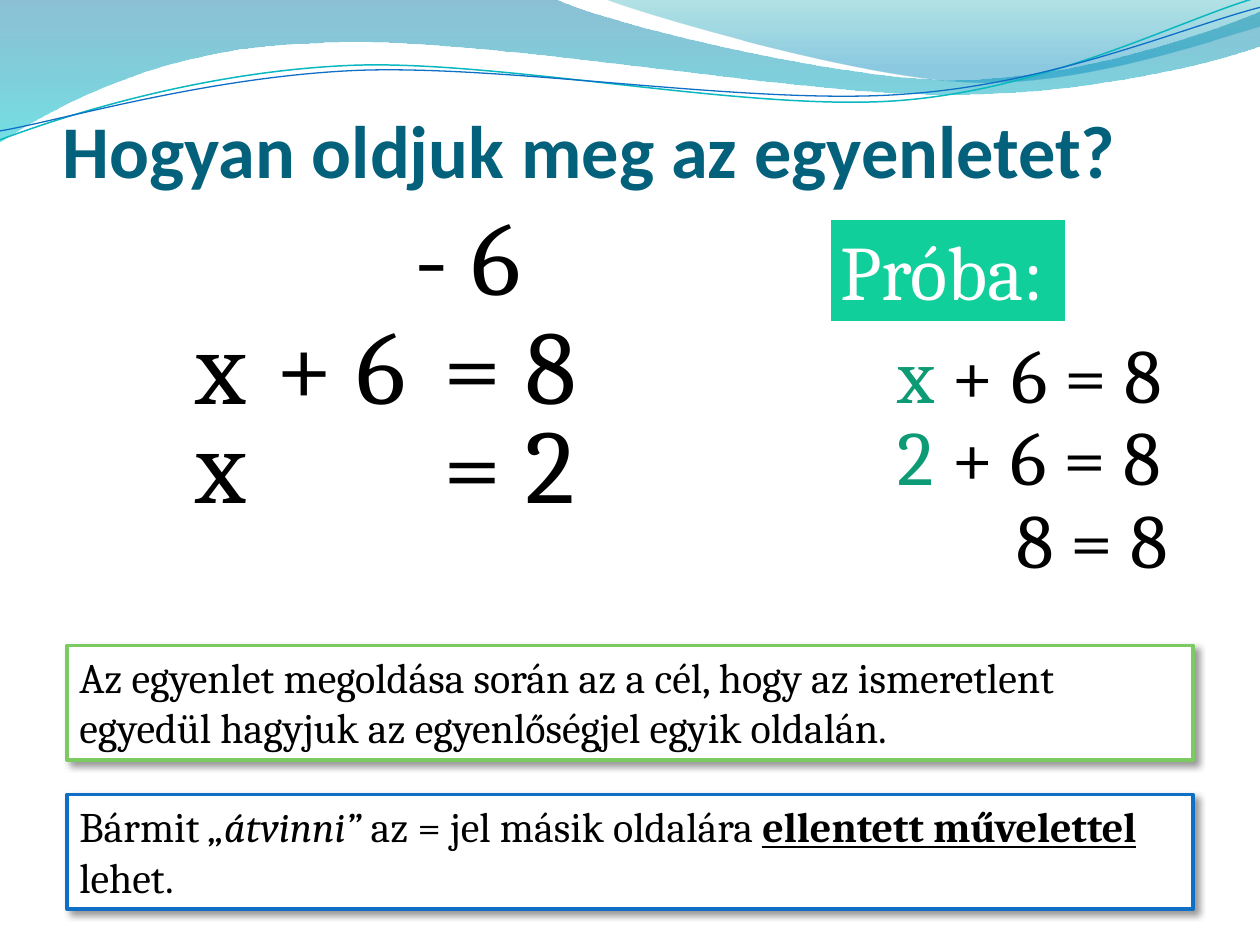
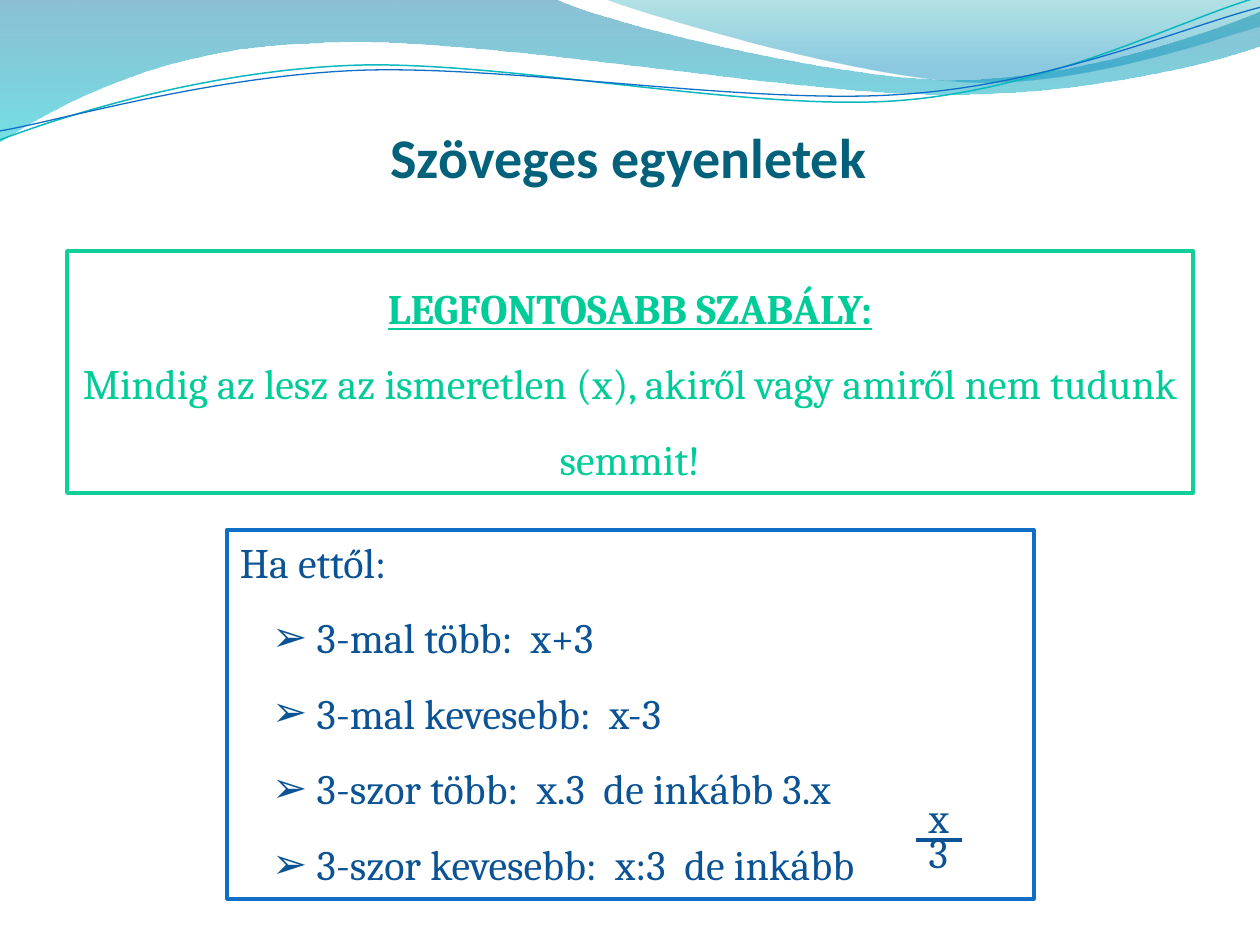
from lxml import etree
from pptx import Presentation
from pptx.dml.color import RGBColor
from pptx.enum.shapes import MSO_CONNECTOR, MSO_SHAPE
from pptx.enum.text import MSO_ANCHOR, MSO_AUTO_SIZE, PP_ALIGN
from pptx.oxml.ns import qn
from pptx.util import Cm, Pt

RECTANGLE = MSO_SHAPE.RECTANGLE
STRAIGHT = MSO_CONNECTOR.STRAIGHT
LEFT, CENTER = PP_ALIGN.LEFT, PP_ALIGN.CENTER
TOP, BOTTOM = MSO_ANCHOR.TOP, MSO_ANCHOR.BOTTOM
NO_FIT, GROW = MSO_AUTO_SIZE.NONE, MSO_AUTO_SIZE.SHAPE_TO_FIT_TEXT

TITLE_FONT, BODY_FONT = "Calibri", "Cambria"
COLORS = {
    "title": "04617B", "black": "000000", "white": "FFFFFF",
    "blue": "0F6FC6", "navy": "0B5394", "lime": "7CCA62",
    "mint": "10CF9B", "rule": "00CC99", "unknown": "0C9B74",
    "wave top": "0074A1", "wave bottom": "00C6CF",
    "crest top": "00A1A9", "crest bottom": "008BBF", "thread": "0AB8BF",
}
PANEL_LEFT, PANEL_WIDTH = 1.35, 22.7

# Outlines in centimetres: a pair is a straight step, six numbers a Bézier curve.
WAVE = [(0, 0), (11.18, -0.03), (12.09, 0.43, 16.87, 1.6, 19.25, 1.6),
        (21.67, 1.6, 24.33, 0.66, 25.4, 0.23), (25.43, 0.91),
        (24.97, 1.12, 22.1, 1.93, 18.95, 1.9),
        (15.8, 1.9, 9.7, 0.71, 6.53, 0.86),
        (3.28, 0.91, 1.17, 2.11, -0.03, 2.87)]
CREST = [(12.17, -0.03), (12.93, 0.28, 17.32, 1.57, 19.53, 1.65),
         (21.74, 1.75, 24.41, 0.81, 25.4, 0.53), (25.4, 0)]
TEAL_THREAD = [(0, 2.82), (1.22, 2.36, 4.01, 1.45, 7.04, 1.32),
               (10.03, 1.19, 15.06, 2.26, 18.11, 2.03),
               (21.16, 1.8, 23.83, 0.38, 25.35, -0.05)]
BLUE_THREAD = [(0, 2.64), (1.19, 2.44, 4.17, 1.55, 7.19, 1.42),
               (10.24, 1.3, 15.16, 2.13, 18.21, 1.9),
               (21.23, 1.7, 23.9, 0.53, 25.4, 0.15)]


def rgb(color):
    return RGBColor.from_string(COLORS[color])


def bend_segments(shape, steps):
    """Replace the straight segments of the curved steps by Bézier curves."""
    segments = list(shape.element.spPr.iter(qn("a:lnTo")))
    for segment, step in zip(segments, steps):
        if len(step) == 2:
            continue
        curve = etree.Element(qn("a:cubicBezTo"))
        for x, y in zip(step[::2], step[1::2]):
            etree.SubElement(curve, qn("a:pt"), x=str(Cm(x) - shape.left),
                             y=str(Cm(y) - shape.top))
        segment.getparent().replace(segment, curve)


def add_outline(slide, outline, close):
    start, *steps = outline
    builder = slide.shapes.build_freeform(Cm(start[0]), Cm(start[1]), scale=1.0)
    builder.add_line_segments(
        [(Cm(step[-2]), Cm(step[-1])) for step in steps], close=close)
    shape = builder.convert_to_shape()
    bend_segments(shape, steps)
    shape.shadow.inherit = False
    return shape


def add_band(slide, outline, stops):
    """Add a closed area; each stop is (position, colour, opacity in percent)."""
    shape = add_outline(slide, outline, True)
    shape.line.fill.background()
    shape.fill.gradient()
    shape.fill.gradient_angle = 270
    for gradient_stop, (position, color, _) in zip(shape.fill.gradient_stops, stops):
        gradient_stop.position = position
        gradient_stop.color.rgb = rgb(color)
    color_elements = list(shape.element.spPr.iter(qn("a:srgbClr")))
    for element, (_, _, opacity) in zip(color_elements, stops):
        etree.SubElement(element, qn("a:alpha"), val=str(opacity * 1000))
    return shape


def add_thread(slide, outline, color, width):
    shape = add_outline(slide, outline, False)
    shape.fill.background()
    shape.line.color.rgb = rgb(color)
    shape.line.width = Pt(width)
    return shape


def add_waves_to_master(presentation, slide):
    """Draw the waves on a slide, then move them behind the master's content."""
    waves = [
        add_band(slide, WAVE, [(0, "wave top", 45), (1, "wave bottom", 55)]),
        add_band(slide, CREST, [(0, "crest top", 30), (0.8, "crest bottom", 45)]),
        add_thread(slide, TEAL_THREAD, "thread", 0.85),
        add_thread(slide, BLUE_THREAD, "blue", 0.75),
    ]
    master_tree = presentation.slide_master.shapes.element
    for index, wave in enumerate(waves):
        wave.element.nvSpPr.cNvPr.set("id", str(100 + index))
        master_tree.insert(2 + index, wave.element)


def place(shape, left, top, width, height):
    shape.left, shape.top = Cm(left), Cm(top)
    shape.width, shape.height = Cm(width), Cm(height)


def format_paragraph(paragraph, size, color, font=BODY_FONT, align=LEFT, spacing=1.0):
    paragraph.alignment = align
    paragraph.line_spacing = spacing
    paragraph.space_before = Pt(0)
    for run in paragraph.runs:
        run.font.name = font
        run.font.size = Pt(size)
        run.font.color.rgb = rgb(color)


def set_title(slide, text, left, top, size, align, spacing=1.0):
    title = slide.shapes.title
    place(title, left, top, 22.86, 2.41)
    frame = title.text_frame
    frame.text = text
    frame.auto_size = NO_FIT
    frame.vertical_anchor = BOTTOM
    frame.margin_left = frame.margin_right = frame.margin_bottom = 0
    paragraph = frame.paragraphs[0]
    format_paragraph(paragraph, size, "title", TITLE_FONT, align, spacing)
    paragraph.runs[0].font.bold = True


def add_label(slide, text, left, top, width, height, size, color="black"):
    label = slide.shapes.add_textbox(Cm(left), Cm(top), Cm(width), Cm(height))
    frame = label.text_frame
    frame.text = text
    frame.word_wrap = False
    frame.auto_size = GROW
    format_paragraph(frame.paragraphs[0], size, color)
    return label


def add_check_line(slide, unknown, rest, left, top, width):
    """Add one line of the check, with the unknown's place in green."""
    label = add_label(slide, unknown, left, top, width, 2.13, 44)
    paragraph = label.text_frame.paragraphs[0]
    paragraph.add_run().text = rest
    format_paragraph(paragraph, 44, "black")
    paragraph.runs[0].font.color.rgb = rgb("unknown")


def style_panel(shape, fill, line, line_width=2):
    shape.fill.solid()
    shape.fill.fore_color.rgb = rgb(fill)
    shape.line.color.rgb = rgb(line)
    shape.line.width = Pt(line_width)
    shape.shadow.inherit = False
    shape.text_frame.vertical_anchor = TOP
    shape.text_frame.auto_size = NO_FIT


def add_panel(slide, left, top, width, height, fill, line, line_width=2):
    panel = slide.shapes.add_shape(
        RECTANGLE, Cm(left), Cm(top), Cm(width), Cm(height))
    style_panel(panel, fill, line, line_width)
    return panel


def add_shadow(shape):
    effects = shape.element.spPr.find(qn("a:effectLst"))
    shadow = etree.SubElement(
        effects, qn("a:outerShdw"), blurRad=str(Pt(4)), dist=str(Pt(3)),
        dir="2700000", algn="tl", rotWithShape="0")
    color = etree.SubElement(shadow, qn("a:srgbClr"), val=COLORS["black"])
    etree.SubElement(color, qn("a:alpha"), val="40000")


def add_note(slide, top, line, parts):
    """Add a shadowed note; each part is (text, names of the font switches)."""
    note = add_panel(slide, PANEL_LEFT, top, PANEL_WIDTH, 2.31, "white", line)
    add_shadow(note)
    paragraph = note.text_frame.paragraphs[0]
    for text, switches in parts:
        run = paragraph.add_run()
        run.text = text
        for switch in switches:
            setattr(run.font, switch, True)
    format_paragraph(paragraph, 24, "black")


def set_bullet(paragraph, character=None):
    """Give the paragraph an arrow bullet, or none without a character."""
    properties = paragraph._p.get_or_add_pPr()
    properties.set("marL", str(Cm(1.55) if character else 0))
    properties.set("indent", str(Cm(-0.9) if character else 0))
    if character:
        etree.SubElement(properties, qn("a:buChar"), char=character)
    else:
        etree.SubElement(properties, qn("a:buNone"))


def add_fraction(slide, numerator, denominator, left, top):
    width, step, bar_offset = 0.93, 0.71, 1.1
    for row, text in enumerate((numerator, denominator)):
        add_label(slide, text, left, top + row * step, width, 1.27, 24, "navy")
    bar_top = Cm(top + bar_offset)
    bar = slide.shapes.add_connector(
        STRAIGHT, Cm(left), bar_top, Cm(left + width), bar_top)
    bar.line.color.rgb = rgb("navy")
    bar.line.width = Pt(2.25)
    etree.SubElement(bar.element.spPr, qn("a:effectLst"))


def build_solving_slide(slide):
    set_title(slide, "Hogyan oldjuk meg az egyenletet?", 1.26, 1.52, 42.5, LEFT, 0.9)

    columns = [(3.7, 1.45), (5.3, 3.15), (8.7, 3.38)]
    equations = [("x", "+ 6", "= 8"), ("x", "", "= 2")]
    for row, equation in enumerate(equations):
        for term, (left, width) in zip(equation, columns):
            if term:
                add_label(slide, term, left, 5.92 + row * 1.98, width, 2.82, 60)
    add_label(slide, "- 6", 8.1, 3.72, 2.74, 2.82, 60)

    heading = add_panel(slide, 16.69, 4.39, 4.84, 2.13, "mint", "white", 3)
    heading.text_frame.text = "Próba:"
    heading.text_frame.word_wrap = False
    format_paragraph(heading.text_frame.paragraphs[0], 44, "white")

    check_top, check_step = 6.45, 1.67
    for row, unknown in enumerate(("x", "2")):
        add_check_line(slide, unknown, " + 6 = 8", 17.85,
                       check_top + row * check_step, 6.24)
    add_label(slide, "8 = 8", 20.24, check_top + 2 * check_step, 3.84, 2.13, 44)

    add_note(slide, 16.02, "blue", [
        ("Bármit ", ()), ("„átvinni”", ("italic",)),
        (" az = jel másik oldalára ", ()),
        ("ellentett művelettel", ("bold", "underline")), (" lehet.", ())])
    add_note(slide, 13.01, "lime", [
        ("Az egyenlet megoldása során az a cél, hogy az ismeretlent egyedül "
         "hagyjuk az egyenlőségjel egyik oldalán.", ())])


def build_word_problem_slide(slide):
    set_title(slide, "Szöveges egyenletek", 1.24, 1.42, 32, CENTER)

    rule = add_panel(slide, PANEL_LEFT, 5.06, PANEL_WIDTH, 4.88, "white", "mint")
    rule.text_frame.text = (
        "LEGFONTOSABB SZABÁLY:\n"
        "Mindig az lesz az ismeretlen (x), akiről vagy amiről nem tudunk semmit!")
    for paragraph in rule.text_frame.paragraphs:
        format_paragraph(paragraph, 24, "rule", align=CENTER, spacing=1.5)
    heading_font = rule.text_frame.paragraphs[0].runs[0].font
    heading_font.bold = heading_font.underline = True

    phrases = slide.placeholders[1]
    place(phrases, 4.58, 10.68, 16.26, 7.44)
    style_panel(phrases, "white", "blue")
    phrases.text_frame.text = "\n".join([
        "Ha ettől:", "3-mal több:  x+3", "3-mal kevesebb:  x-3",
        "3-szor több:  x.3  de inkább 3.x", "3-szor kevesebb:  x:3  de inkább"])
    for index, paragraph in enumerate(phrases.text_frame.paragraphs):
        format_paragraph(paragraph, 24, "navy", spacing=1.5 if index else 1.0)
        set_bullet(paragraph, "➢" if index else None)

    add_fraction(slide, "x", "3", 18.47, 15.83)


def main():
    presentation = Presentation()
    presentation.slide_width, presentation.slide_height = Cm(25.4), Cm(19.05)
    title_and_content, title_only = (presentation.slide_layouts[i] for i in (1, 5))
    solving_slide = presentation.slides.add_slide(title_only)
    word_problem_slide = presentation.slides.add_slide(title_and_content)
    add_waves_to_master(presentation, solving_slide)
    build_solving_slide(solving_slide)
    build_word_problem_slide(word_problem_slide)
    presentation.save("out.pptx")


if __name__ == "__main__":
    main()
